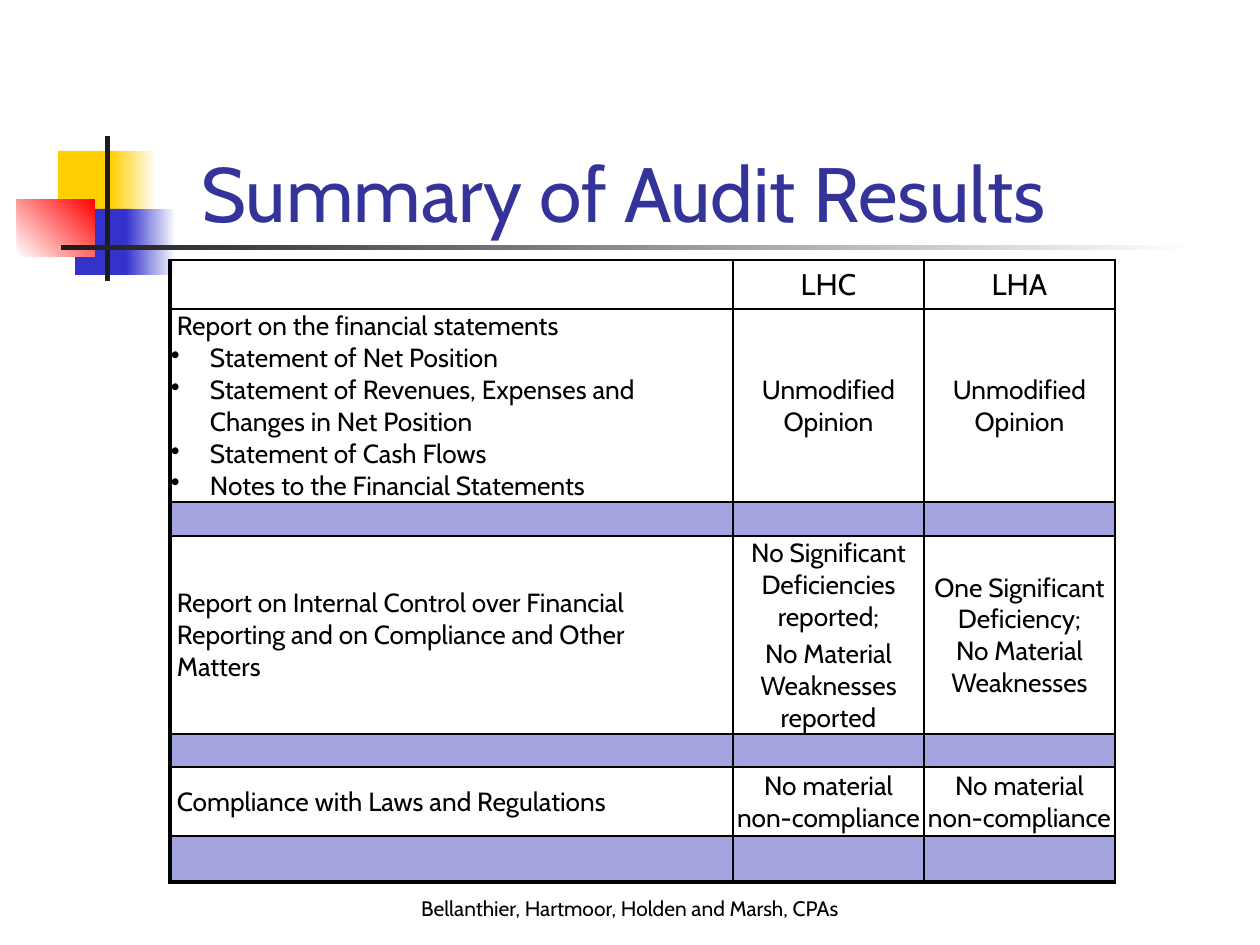
"""Build the audit results slide with its ornament, title, table and footer."""
from dataclasses import dataclass
from typing import Optional

from lxml.etree import SubElement
from pptx import Presentation
from pptx.dml.color import RGBColor
from pptx.enum.shapes import MSO_SHAPE as Shape
from pptx.enum.text import MSO_ANCHOR as Anchor, PP_ALIGN as Align
from pptx.oxml import parse_xml
from pptx.oxml.ns import nsdecls, qn
from pptx.util import Emu, Pt

FONT = "Cabin"
COLORS = {
    "yellow": "FFCF01", "blue": "3333CC", "red": "FF0000", "dark": "1C1C1C",
    "white": "FFFFFF", "title": "333399", "text": "000000", "band": "A3A3E0",
}
BULLET_INDENT = 39
COLUMN_WIDTHS = (563, 191, 191)
ROW_HEIGHTS = (49, 193, 34, 198, 33, 69, 46)
THIN, THICK = 1, 2.25


@dataclass(frozen=True)
class Block:
    left: int
    top: int
    width: int
    height: int
    color: str
    end_color: Optional[str] = None
    angle: int = 0


@dataclass(frozen=True)
class Label:
    left: int
    top: int
    width: int
    height: int
    text: str
    size: int
    color: str


@dataclass(frozen=True)
class Line:
    text: str
    bullet: bool = False
    space_after: int = 0


BLOCKS = (
    Block(58, 151, 60, 66, "yellow"),
    Block(111, 151, 45, 66, "yellow", "white"),
    Block(75, 209, 58, 66, "blue"),
    Block(126, 209, 50, 66, "blue", "white"),
    Block(17, 199, 78, 58, "white", "red", 45),
    Block(105, 136, 5, 145, "dark"),
    Block(61, 245, 1134, 5, "dark", "white"),
)
LABELS = (
    Label(96, 42, 1073, 202, "Summary of Audit Results ", 44, "title"),
    Label(353, 896, 554, 31, "Bellanthier, Hartmoor, Holden and Marsh, CPAs", 12, "text"),
)
OPINION = (Line("Unmodified Opinion"),)
COMPLIANT = (Line("No material non-compliance"),)
BAND = ((), (), ())
ROWS = (
    ((), (Line("LHC"),), (Line("LHA"),)),
    ((
        Line(" Report on the financial statements"),
        Line("Statement of Net Position", bullet=True),
        Line("Statement of Revenues, Expenses and Changes in Net Position", bullet=True),
        Line("Statement of Cash Flows", bullet=True),
        Line("Notes to the Financial Statements", bullet=True),
    ), OPINION, OPINION),
    BAND,
    (
        (Line(" Report on Internal Control over Financial"),
         Line(" Reporting and on Compliance and Other"),
         Line(" Matters")),
        (Line("No Significant Deficiencies reported;", space_after=3),
         Line("No Material Weaknesses reported")),
        (Line("One Significant Deficiency;"), Line("No Material Weaknesses")),
    ),
    BAND,
    ((Line(" Compliance with Laws and Regulations"),), COMPLIANT, COMPLIANT),
    BAND,
)


def px(length: int) -> Emu:
    """Turn pixels at 126 to the inch into EMU."""
    return Emu(round(length * 914400 / 126))


def rgb(name: str) -> RGBColor:
    """Look up a named colour."""
    return RGBColor.from_string(COLORS[name])


def style_paragraph(paragraph, size: int, color: str, align: Align) -> None:
    """Set the font and alignment of a paragraph."""
    paragraph.alignment = align
    paragraph.font.name = FONT
    paragraph.font.size = Pt(size)
    paragraph.font.color.rgb = rgb(color)


def draw_block(slide, block: Block) -> None:
    """Draw a plain or gradient rectangle."""
    shape = slide.shapes.add_shape(
        Shape.RECTANGLE, px(block.left), px(block.top), px(block.width), px(block.height))
    shape.shadow.inherit = False
    shape.line.fill.background()
    if block.end_color is None:
        shape.fill.solid()
        shape.fill.fore_color.rgb = rgb(block.color)
        return
    shape.fill.gradient()
    shape.fill.gradient_angle = block.angle
    for stop, color in zip(shape.fill.gradient_stops, (block.color, block.end_color)):
        stop.color.rgb = rgb(color)


def draw_label(slide, label: Label) -> None:
    """Draw a centred text box anchored at its bottom."""
    shape = slide.shapes.add_textbox(
        px(label.left), px(label.top), px(label.width), px(label.height))
    frame = shape.text_frame
    frame.word_wrap = True
    frame.vertical_anchor = Anchor.BOTTOM
    frame.text = label.text
    style_paragraph(frame.paragraphs[0], label.size, label.color, Align.CENTER)


def set_borders(cell, left: float, bottom: float) -> None:
    """Give a cell black borders with the given left and bottom widths."""
    properties = cell._tc.get_or_add_tcPr()
    widths = {"lnL": left, "lnR": THIN, "lnT": THIN, "lnB": bottom}
    for index, (tag, width) in enumerate(widths.items()):
        properties.insert(index, parse_xml(
            f'<a:{tag} {nsdecls("a")} w="{Pt(width)}"><a:solidFill>'
            f'<a:srgbClr val="{COLORS["text"]}"/></a:solidFill></a:{tag}>'))


def add_bullet(paragraph) -> None:
    """Give a paragraph a hanging bullet."""
    properties = paragraph._p.get_or_add_pPr()
    properties.set("marL", str(px(BULLET_INDENT)))
    properties.set("indent", str(-px(BULLET_INDENT)))
    properties.insert_element_before(
        parse_xml(f'<a:buChar {nsdecls("a")} char="•"/>'), "a:tabLst", "a:defRPr", "a:extLst")


def fill_cell(cell, lines: tuple[Line, ...], size: int, align: Align) -> None:
    """Write the lines of a cell."""
    cell.vertical_anchor = Anchor.MIDDLE
    cell.margin_left = cell.margin_right = cell.margin_top = px(1)
    cell.margin_bottom = 0
    frame = cell.text_frame
    if not lines:
        SubElement(frame.paragraphs[0]._p, qn("a:endParaRPr"), sz="1200")
        return
    frame.text = "\n".join(line.text for line in lines)
    for paragraph, line in zip(frame.paragraphs, lines):
        style_paragraph(paragraph, size, "text", align)
        paragraph.space_after = Pt(line.space_after)
        if line.bullet:
            add_bullet(paragraph)


def draw_table(slide) -> None:
    """Draw the table of audit results."""
    table = slide.shapes.add_table(
        len(ROWS), len(COLUMN_WIDTHS), px(170), px(260),
        px(sum(COLUMN_WIDTHS)), px(sum(ROW_HEIGHTS))).table
    table.first_row = table.horz_banding = False
    for column, width in zip(table.columns, COLUMN_WIDTHS):
        column.width = px(width)
    for row_index, (row, height) in enumerate(zip(ROWS, ROW_HEIGHTS)):
        table.rows[row_index].height = px(height)
        for column_index, lines in enumerate(row):
            cell = table.cell(row_index, column_index)
            if row is BAND:
                cell.fill.solid()
                cell.fill.fore_color.rgb = rgb("band")
            else:
                cell.fill.background()
            set_borders(cell, THIN if column_index else THICK,
                        THICK if row_index == len(ROWS) - 1 else THIN)
            fill_cell(cell, lines, 15 if row_index else 17,
                      Align.CENTER if column_index else Align.LEFT)


def main() -> None:
    """Build and save the presentation."""
    presentation = Presentation()
    presentation.slide_width, presentation.slide_height = px(1260), px(945)
    slide = presentation.slides.add_slide(presentation.slide_layouts[6])
    for block in BLOCKS:
        draw_block(slide, block)
    for label in LABELS:
        draw_label(slide, label)
    draw_table(slide)
    presentation.save("out.pptx")


if __name__ == "__main__":
    main()
